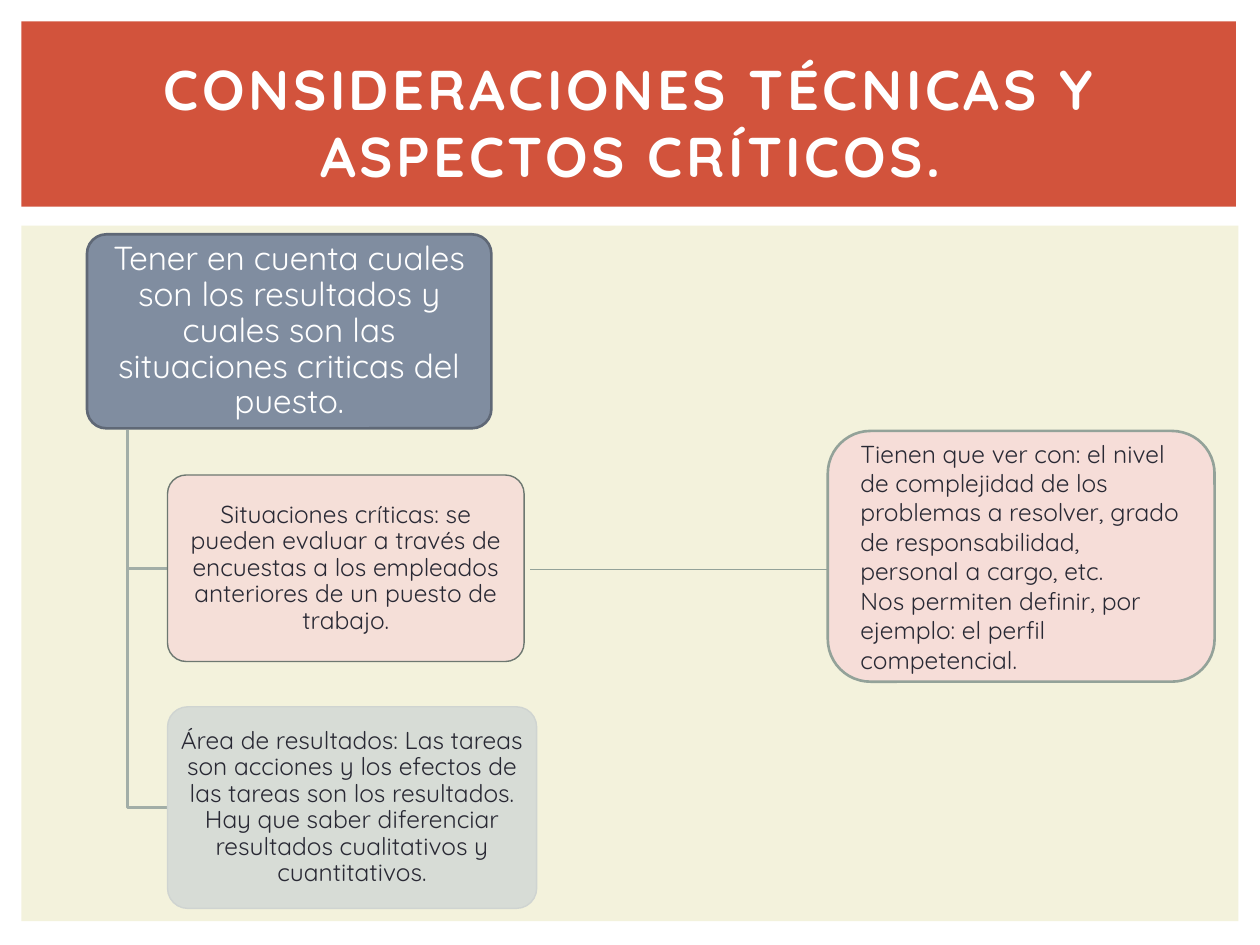
from dataclasses import dataclass
from lxml import etree
from pptx import Presentation
from pptx.dml.color import RGBColor
from pptx.enum.shapes import MSO_CONNECTOR, MSO_SHAPE
from pptx.enum.text import MSO_ANCHOR, PP_ALIGN
from pptx.oxml.ns import qn
from pptx.util import Inches, Pt

RECT, ROUND = MSO_SHAPE.RECTANGLE, MSO_SHAPE.ROUNDED_RECTANGLE
STRAIGHT = MSO_CONNECTOR.STRAIGHT
MIDDLE = MSO_ANCHOR.MIDDLE
LEFT, CENTER = PP_ALIGN.LEFT, PP_ALIGN.CENTER
COLS, ROWS = 100, 75
CELL = Inches(0.1)


@dataclass(frozen=True)
class Theme:
    """Colours, type sizes and line widths of the slide."""
    font: str = "Quicksand"
    band: str = "D2533C"
    panel: str = "F3F2DC"
    white: str = "FFFFFF"
    ink: str = "292934"
    slate: str = "808DA0"
    edge: str = "5F6876"
    rose: str = "F6DDD8"
    moss: str = "6D7871"
    mist: str = "D4DAD6"
    rim: str = "CFD4D1"
    sage: str = "93A299"
    branch: str = "A2AEA7"
    title: int = 32
    lead: int = 19
    body: int = 14
    thin: float = 0.79
    thick: float = 1.5


@dataclass(frozen=True)
class Box:
    """A region in grid columns and rows."""
    x: float
    y: float
    w: float
    h: float

    def inner(self, x, y, w, h):
        """Return a box placed relative to this one."""
        return Box(self.x + x, self.y + y, w, h)

    def emu(self):
        """Return left, top, width and height as lengths."""
        return [round(n * CELL) for n in (self.x, self.y, self.w, self.h)]


THEME = Theme()


def paint(line, color, width):
    """Set the colour and width of a line."""
    line.color.rgb = RGBColor.from_string(color)
    line.width = Pt(width)


def block(slide, box, kind, fill):
    """Add a flat filled shape without an outline."""
    shape = slide.shapes.add_shape(kind, *box.emu())
    shape.shadow.inherit = False
    shape.fill.solid()
    shape.fill.fore_color.rgb = RGBColor.from_string(fill)
    shape.line.fill.background()
    return shape


def fade(shape, share):
    """Make a solid fill partly transparent."""
    color = shape._element.spPr.find(qn("a:solidFill"))[0]
    etree.SubElement(color, qn("a:alpha")).set("val", str(share * 1000))


def write(frame, texts, size, color, align=CENTER, space=None):
    """Write one paragraph per text and return the runs."""
    frame.word_wrap = True
    frame.vertical_anchor = MIDDLE
    runs = []
    for i, text in enumerate(texts):
        para = frame.add_paragraph() if i else frame.paragraphs[0]
        para.alignment = align
        para.line_spacing = space
        run = para.add_run()
        run.text = text
        run.font.name = THEME.font
        run.font.size = Pt(size)
        run.font.color.rgb = RGBColor.from_string(color)
        runs.append(run)
    return runs


def card(slide, box, texts, fill, edge, width, size=THEME.body,
         color=THEME.ink, round_by=0.1, pad=0.04, align=CENTER, space=0.9):
    """Add a rounded card with its text."""
    shape = block(slide, box, ROUND, fill)
    shape.adjustments[0] = round_by
    paint(shape.line, edge, width)
    frame = shape.text_frame
    frame.margin_left = frame.margin_right = Inches(pad)
    frame.margin_top = frame.margin_bottom = Inches(0.02)
    write(frame, texts, size, color, align, space)
    return shape


def elbow(slide, box):
    """Add a branch that runs down and then right."""
    x, y, w, h = box.emu()
    route = slide.shapes.build_freeform(x, y)
    route.add_line_segments([(x, y + h), (x + w, y + h)], close=False)
    shape = route.convert_to_shape()
    shape.shadow.inherit = False
    shape.fill.background()
    paint(shape.line, THEME.branch, THEME.thick)


def link(slide, box):
    """Add a thin straight line along the top of a box."""
    x, y, w, _ = box.emu()
    line = slide.shapes.add_connector(STRAIGHT, x, y, x + w, y)
    paint(line.line, THEME.sage, THEME.thin)
    etree.SubElement(line._element.spPr, qn("a:effectLst"))


def header(slide, box):
    """Fill the title band and set the title on it."""
    band = block(slide, box, RECT, THEME.band)
    title = slide.shapes.title
    band._element.addnext(title._element)
    spot = box.inner(2.5, 2.2, box.w - 4.7, 11.5)
    title.left, title.top, title.width, title.height = spot.emu()
    text = "CONSIDERACIONES TÉCNICAS Y ASPECTOS CRÍTICOS."
    run, = write(title.text_frame, [text], THEME.title, THEME.white)
    run.font.bold = True
    run._r.get_or_add_rPr().set("spc", "200")


def tree(slide, box):
    """Draw the lead card with its two branches."""
    card(slide, box.inner(0, 0, 32.1, 15.4),
         ["Tener en cuenta cuales son los resultados y cuales son las "
          "situaciones criticas del puesto."],
         THEME.slate, THEME.edge, THEME.thick, THEME.lead, THEME.white)
    leaves = [
        (19.1, 28.3, 14.8, THEME.rose, THEME.moss,
         "Situaciones críticas: se pueden evaluar a través de encuestas a "
         "los empleados anteriores de un puesto de trabajo."),
        (37.5, 29.3, 16, THEME.mist, THEME.rim,
         "Área de resultados: Las tareas son acciones y los efectos de las "
         "tareas son los resultados. Hay que saber diferenciar resultados "
         "cualitativos y cuantitativos."),
    ]
    for top, wide, high, fill, edge, text in leaves:
        elbow(slide, box.inner(3.2, 15.5, 3.2, top + high / 2 - 15.5))
        leaf = card(slide, box.inner(6.4, top, wide, high), [text],
                    fill, edge, THEME.thin, pad=0.03)
        fade(leaf, 90)


def detail(slide, box):
    """Draw the detail card and the line that leads to it."""
    link(slide, box.inner(0, 11, 23.6, 0))
    card(slide, box.inner(23.6, 0, 30.7, box.h),
         ["Tienen que ver con: el nivel de complejidad de los problemas a "
          "resolver, grado de responsabilidad, personal a cargo, etc.",
          "Nos permiten definir, por ejemplo: el perfil competencial."],
         THEME.rose, THEME.sage, THEME.thick,
         round_by=0.17, pad=0.16, align=LEFT, space=None)


def main():
    """Build the slide and save it."""
    deck = Presentation()
    deck.slide_width, deck.slide_height = COLS * CELL, ROWS * CELL
    slide = deck.slides.add_slide(deck.slide_layouts[5])
    block(slide, Box(1.7, 17.9, 96.6, 55.2), RECT, THEME.panel)
    header(slide, Box(1.7, 1.7, 96.4, 14.7))
    tree(slide, Box(6.9, 18.6, 35.7, 53.5))
    detail(slide, Box(42.1, 34.2, 54.3, 19.9))
    deck.save("out.pptx")


if __name__ == "__main__":
    main()
